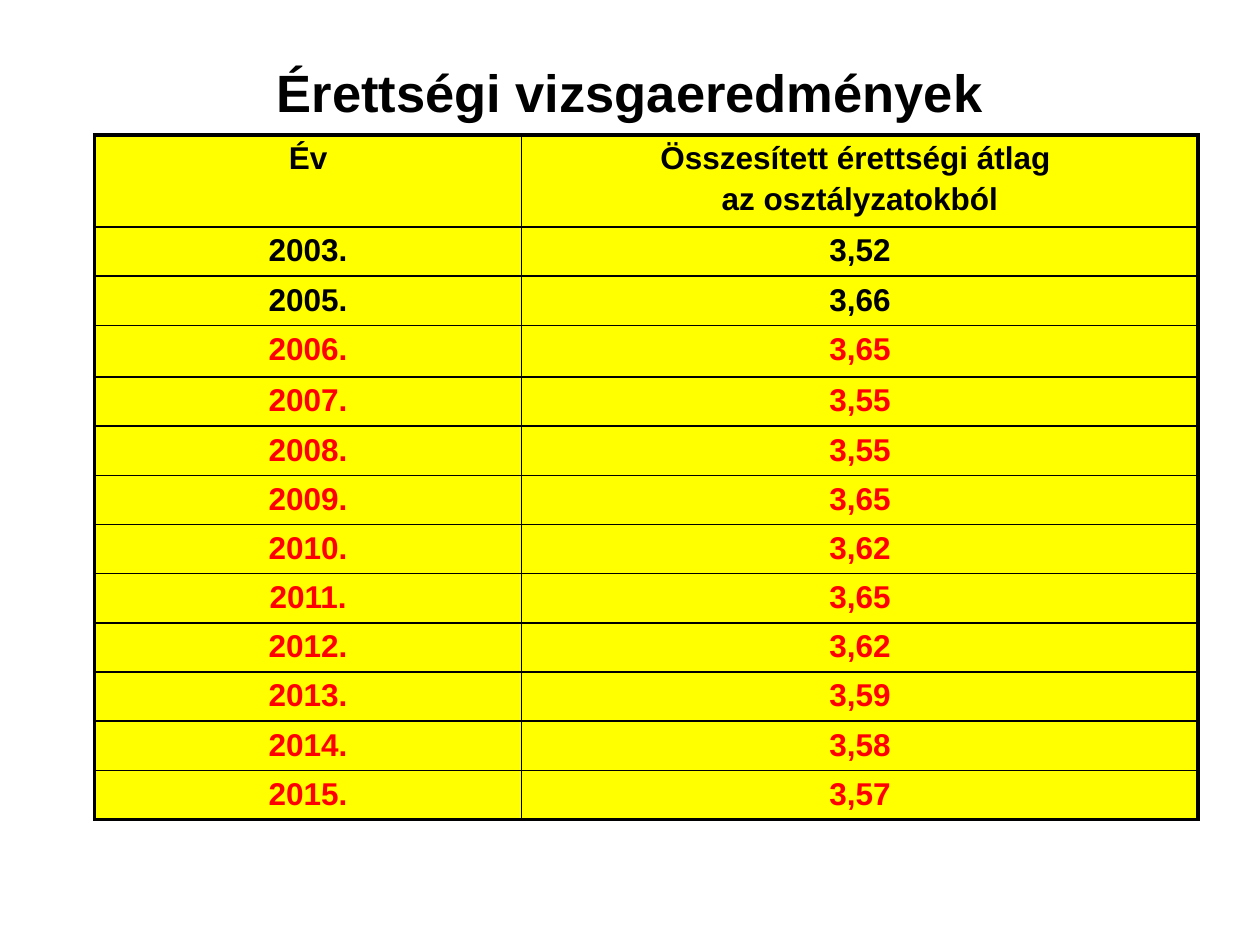
from pptx import Presentation
from pptx.dml.color import RGBColor
from pptx.enum.text import MSO_ANCHOR, PP_ALIGN
from pptx.oxml import parse_xml
from pptx.oxml.ns import nsdecls
from pptx.util import Inches, Pt

BLACK, RED, YELLOW = "000000", "FF0000", "FFFF00"
THIN, THICK = 1, 2.25

HEADER = ("Év", "Összesített érettségi átlag \naz osztályzatokból")
RESULTS = [
    ("2003.", "3,52"), ("2005.", "3,66"), ("2006.", "3,65"),
    ("2007.", "3,55"), ("2008.", "3,55"), ("2009.", "3,65"),
    ("2010.", "3,62"), ("2011.", "3,65"), ("2012.", "3,62"),
    ("2013.", "3,59"), ("2014.", "3,58"), ("2015.", "3,57"),
]
COL_WIDTHS = [3.39, 5.37]
ROW_HEIGHTS = [0.71, 0.38, 0.38, 0.41] + [0.39] * 3 + [0.38] * 6
FIRST_RED_ROW = 3


def rgb(color):
    return RGBColor.from_string(color)


def write_text(tf, text, size, color):
    """Centred bold text, one paragraph per line."""
    for i, line in enumerate(text.split("\n")):
        p = tf.add_paragraph() if i else tf.paragraphs[0]
        p.alignment = PP_ALIGN.CENTER
        if i:
            p.space_before = Pt(3)
        r = p.add_run()
        r.text = line
        r.font.name = "Arial"
        r.font.size = Pt(size)
        r.font.bold = True
        r.font.color.rgb = rgb(color)


def set_borders(cell, widths):
    """Border widths in points, by side: L, R, T, B."""
    tcPr = cell._tc.get_or_add_tcPr()
    for i, (side, width) in enumerate(widths.items()):
        tcPr.insert(i, parse_xml(
            f'<a:ln{side} {nsdecls("a")} w="{Pt(width)}"><a:solidFill>'
            f'<a:srgbClr val="{BLACK}"/></a:solidFill></a:ln{side}>'))


def add_title(slide, text):
    s = slide.shapes.add_textbox(Inches(0.5), Inches(0.3), Inches(9), Inches(0.85))
    tf = s.text_frame
    tf.word_wrap = True
    tf.vertical_anchor = MSO_ANCHOR.MIDDLE
    write_text(tf, text, 30, BLACK)


def add_results_table(slide, rows):
    last_row, last_col = len(rows) - 1, len(COL_WIDTHS) - 1
    table = slide.shapes.add_table(
        len(rows), len(COL_WIDTHS), Inches(0.75), Inches(1.07),
        Inches(sum(COL_WIDTHS)), Inches(sum(ROW_HEIGHTS))).table
    table.first_row = table.horz_banding = False
    for column, width in zip(table.columns, COL_WIDTHS):
        column.width = Inches(width)
    for row, height in zip(table.rows, ROW_HEIGHTS):
        row.height = Inches(height)

    for i, values in enumerate(rows):
        color = RED if i >= FIRST_RED_ROW else BLACK
        for j, value in enumerate(values):
            cell = table.cell(i, j)
            cell.margin_bottom = Inches(0.04)
            cell.fill.solid()
            cell.fill.fore_color.rgb = rgb(YELLOW)
            write_text(cell.text_frame, value, 18, color)
            # Thick outer frame, thin inner grid
            set_borders(cell, {
                "L": THICK if j == 0 else THIN,
                "R": THICK if j == last_col else THIN,
                "T": THICK if i == 0 else THIN,
                "B": THICK if i == last_row else THIN,
            })


def main():
    prs = Presentation()
    prs.slide_width, prs.slide_height = Inches(10), Inches(7.5)
    slide = prs.slides.add_slide(prs.slide_layouts[6])
    add_title(slide, "Érettségi vizsgaeredmények")
    add_results_table(slide, [HEADER] + RESULTS)
    prs.save("out.pptx")


if __name__ == "__main__":
    main()
